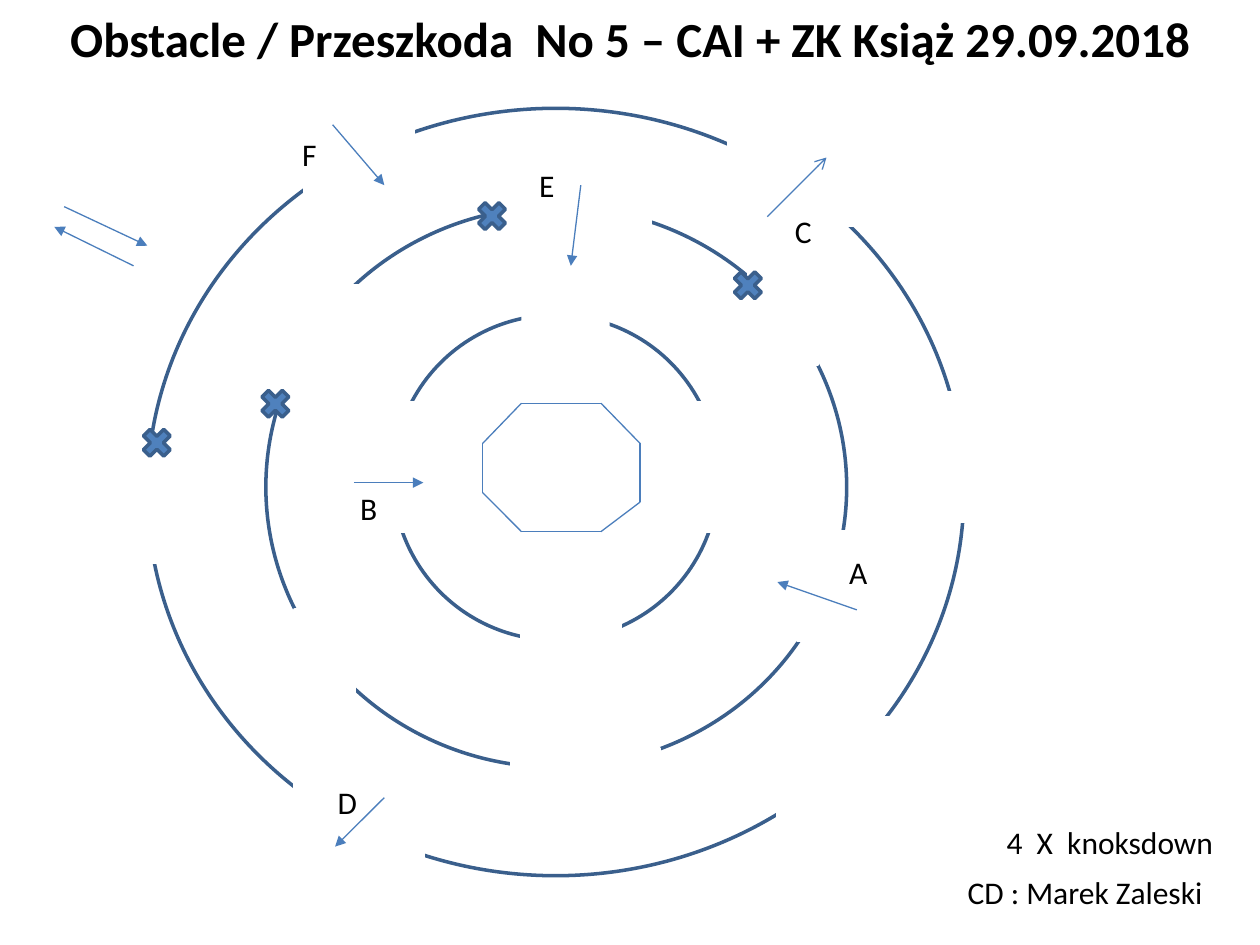
"""Builds the course plan of obstacle 5 as one slide."""
from lxml import etree
from pptx import Presentation
from pptx.dml.color import RGBColor
from pptx.enum.shapes import MSO_CONNECTOR, MSO_SHAPE
from pptx.enum.text import MSO_ANCHOR, MSO_AUTO_SIZE, PP_ALIGN
from pptx.oxml.ns import qn
from pptx.util import Pt

RECT, OVAL, CROSS = MSO_SHAPE.RECTANGLE, MSO_SHAPE.OVAL, MSO_SHAPE.MATH_MULTIPLY
STRAIGHT = MSO_CONNECTOR.STRAIGHT
LEFT, CENTER = PP_ALIGN.LEFT, PP_ALIGN.CENTER
TOP, MIDDLE = MSO_ANCHOR.TOP, MSO_ANCHOR.MIDDLE
GROW = MSO_AUTO_SIZE.SHAPE_TO_FIT_TEXT

WHITE, BLACK = "FFFFFF", "000000"
BLUE, DARK, THIN = "4F81BD", "3A5F8C", "4B7EBC"
SIDE = 22.3
TITLE = "Obstacle / Przeszkoda  No 5 – CAI + ZK Książ 29.09.2018"
CORNERS = [(298, 230.4), (343.4, 230.4), (365.8, 253.4), (365.8, 286.9),
           (343.4, 303.8), (298, 303.8), (275.8, 281.5), (275.8, 253.4)]
RINGS = [(224.6, 180, 185.8, 185.8), (151.9, 118.1, 331.9, 320.4),
         (84.2, 61.9, 466.6, 438.5)]
INNER = (298, 174.2, 50.4, 22.3)
GAPS = [(298, 354.2, 56.2, 22.3), (393.8, 230.4, 33.8, 73.4),
        (219.6, 230.4, 22.3, 73.4), (292.3, 427.7, 84.2, 16.6),
        (281.5, 112.3, 90, 28.1), (455.8, 303.8, 45.4, 61.9),
        (427.7, 151.9, 39.6, 56.2), (151.9, 163.4, 67.7, 67.7),
        (168.5, 348.5, 33.8, 56.2), (416.2, 78.5, 73.4, 50.4),
        (174.2, 61.9, 61.9, 61.9), (61.9, 247.7, 45.4, 73.4),
        (168.5, 438.5, 73.4, 73.4), (444.2, 410.4, 90, 61.9),
        (523.4, 224.6, 61.9, 73.4)]
ARROWS = [((438.5, 123.8), (472.3, 90), "arrow"),
          ((36.7, 118.1), (84.2, 140.4), "triangle"),
          ((76.3, 151.9), (31, 129.6), "triangle"),
          ((190.1, 71.3), (219.6, 105.8), "triangle"),
          ((331.9, 105.8), (326.2, 151.9), "triangle"),
          ((489.6, 348.5), (444.2, 332.6), "triangle"),
          ((202.3, 275.8), (241.9, 275.8), "triangle"),
          ((219.6, 455.8), (191.5, 483.8), "triangle")]
LABELS = [("CD : Marek Zaleski", 545.8, 495.4, 150.5),
          ("C", 447.1, 117.4, 24.5), ("E", 301, 91.4, 23),
          ("F", 165.6, 73.4, 23), ("A", 478.1, 312.5, 25.2),
          ("B", 198.7, 275.8, 24.5), ("D", 185.8, 444.2, 25.9),
          ("4  X  knoksdown", 568.1, 466.6, 133.9)]
KNOCKS = [(78.5, 241.9), (270, 112.3), (416.2, 151.9), (146.2, 219.6)]


def color(code):
    return RGBColor.from_string(code)


def shape(slide, kind, box, fill=None, line=None):
    item = slide.shapes.add_shape(kind, *map(Pt, box))
    item.shadow.inherit = False
    if fill:
        item.fill.solid()
        item.fill.fore_color.rgb = color(fill)
    else:
        item.fill.background()
    if line:
        item.line.color.rgb = color(line)
        item.line.width = Pt(2)
    else:
        item.line.fill.background()


def stroke(slide, start, end, head=None):
    item = slide.shapes.add_connector(STRAIGHT, *map(Pt, start + end))
    item.line.color.rgb = color(THIN)
    item.line.width = Pt(0.75)
    if head:
        etree.SubElement(item.line._get_or_add_ln(), qn("a:tailEnd"), type=head)
    etree.SubElement(item._element.spPr, qn("a:effectLst"))


def write(frame, text, size, align, anchor, bold=False):
    frame.text = text
    frame.vertical_anchor = anchor
    para = frame.paragraphs[0]
    para.alignment = align
    font = para.font
    font.name, font.size, font.bold = "Calibri", Pt(size), bold
    font.color.rgb = color(BLACK)


def main():
    deck = Presentation()
    deck.slide_width, deck.slide_height = Pt(720), Pt(540)
    slide = deck.slides.add_slide(deck.slide_layouts[5])
    title = slide.shapes.title
    title.left, title.top, title.width, title.height = map(Pt, (0, 0, 720, 43.2))
    write(title.text_frame, TITLE, 28, CENTER, MIDDLE, True)

    for start, end in zip(CORNERS, CORNERS[1:] + CORNERS[:1]):
        stroke(slide, start, end)
    for box in RINGS:
        shape(slide, OVAL, box, line=DARK)
    shape(slide, RECT, INNER, WHITE)
    for box in GAPS:
        shape(slide, RECT, box, WHITE, WHITE)
    for start, end, head in ARROWS:
        stroke(slide, start, end, head)
    for text, x, y, width in LABELS:
        frame = slide.shapes.add_textbox(*map(Pt, (x, y, width, 28.8))).text_frame
        frame.word_wrap = False
        frame.auto_size = GROW
        write(frame, text, 18, LEFT, TOP)
    for x, y in KNOCKS:
        shape(slide, CROSS, (x, y, SIDE, SIDE), BLUE, DARK)
    deck.save("out.pptx")


if __name__ == "__main__":
    main()
